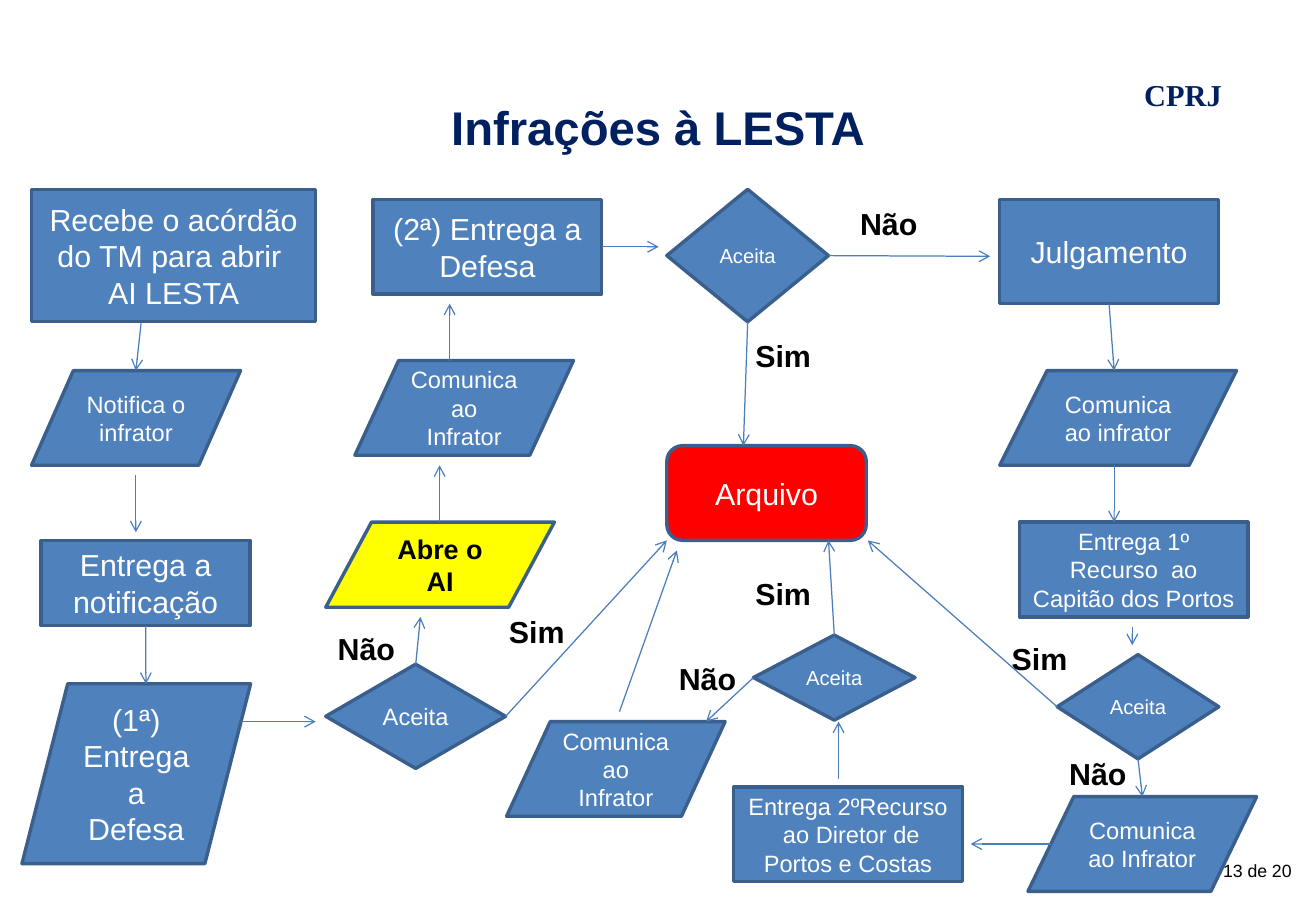
import pptx
import pptx.util
import pptx.dml.color
import pptx.enum.shapes
import pptx.enum.text
import pptx.oxml
import pptx.oxml.ns
from dataclasses import dataclass

Cm = pptx.util.Cm
Pt = pptx.util.Pt
MSO_SHAPE = pptx.enum.shapes.MSO_SHAPE
PROCESS = MSO_SHAPE.FLOWCHART_PROCESS
NOTICE = MSO_SHAPE.FLOWCHART_DATA
DECISION = MSO_SHAPE.FLOWCHART_DECISION
ARCHIVE = MSO_SHAPE.FLOWCHART_ALTERNATE_PROCESS
TOP, LEFT, BOTTOM, RIGHT = range(4)


@dataclass(frozen=True)
class Theme:
    font: str = "Arial"
    header_font: str = "Times New Roman"
    navy: str = "002060"
    blue: str = "4F81BD"
    outline: str = "3A5F8C"
    arrow: str = "4B7EBC"
    red: str = "FF0000"
    yellow: str = "FFFF00"
    white: str = "FFFFFF"
    black: str = "000000"
    title: float = 28
    large: float = 18
    medium: float = 16
    small: float = 14
    tiny: float = 12
    page: float = 10.5
    outline_width: float = 2
    arrow_width: float = 0.75


theme = Theme()

steps = {
    "acórdão": (PROCESS, "Recebe o acórdão do TM para abrir  AI LESTA", theme.large, (0.66, 3.96, 5.94, 2.77)),
    "notifica": (NOTICE, "Notifica o infrator", theme.small, (0.66, 7.75, 4.37, 1.98)),
    "notificação": (PROCESS, "Entrega a notificação", theme.large, (0.86, 11.3, 4.37, 1.78)),
    "1ª defesa": (NOTICE, "(1ª) Entrega a Defesa", theme.large, (0.46, 14.3, 4.78, 3.76)),
    "aceita 1ª": (DECISION, "Aceita", theme.small, (6.81, 13.89, 3.76, 2.18)),
    "abre": (NOTICE, "Abre o AI", theme.medium, (6.81, 10.92, 4.78, 1.78)),
    "comunica AI": (NOTICE, "Comunica ao Infrator", theme.small, (7.42, 7.54, 4.57, 1.98)),
    "2ª defesa": (PROCESS, "(2ª) Entrega a Defesa", theme.large, (7.8, 4.17, 4.78, 1.98)),
    "aceita 2ª": (DECISION, "Aceita", theme.tiny, (13.94, 3.96, 3.38, 2.77)),
    "arquivo": (ARCHIVE, "Arquivo", theme.large, (13.94, 9.32, 4.17, 1.98)),
    "julgamento": (PROCESS, "Julgamento", theme.large, (20.9, 4.17, 4.57, 2.18)),
    "comunica julgamento": (NOTICE, "Comunica ao infrator", theme.small, (20.9, 7.75, 4.95, 1.98)),
    "1º recurso": (PROCESS, "Entrega 1º Recurso  ao Capitão dos Portos", theme.small, (21.31, 10.92, 4.78, 1.98)),
    "aceita 1º": (DECISION, "Aceita", theme.tiny, (22.1, 13.69, 3.38, 2.18)),
    "comunica 1º": (NOTICE, "Comunica ao Infrator", theme.small, (21.49, 16.66, 4.78, 1.98)),
    "2º recurso": (PROCESS, "Entrega 2ºRecurso  ao Diretor de Portos e Costas", theme.small,
                   (15.34, 16.46, 4.78, 1.98)),
    "aceita 2º": (DECISION, "Aceita", theme.tiny, (15.75, 13.28, 3.38, 1.78)),
    "comunica 2º": (NOTICE, "Comunica ao Infrator", theme.small, (10.59, 15.09, 4.57, 1.98)),
}
highlights = {
    "abre": (theme.yellow, theme.black, True),
    "arquivo": (theme.red, theme.white, False),
}

arrows = [
    ((2.95, 6.76), (2.84, 7.75)),
    ((2.84, 9.93), (2.84, 11.13)),
    (("notificação", BOTTOM), (3.05, 14.3)),
    ((5.03, 15.09), (6.6, 15.09)),
    (("aceita 1ª", TOP), (8.79, 12.9)),
    (("aceita 1ª", RIGHT), (13.94, 11.3)),
    ((9.19, 10.92), (9.19, 9.73)),
    ((9.4, 7.54), (9.4, 6.35)),
    (("2ª defesa", RIGHT), (13.77, 5.16)),
    (("aceita 2ª", BOTTOM), (15.54, 9.32)),
    (("aceita 2ª", RIGHT), (20.7, 5.36)),
    (("julgamento", BOTTOM), (23.29, 7.75)),
    ((23.29, 9.73), (23.29, 10.92)),
    ((23.67, 13.11), (23.67, 13.49)),
    (("aceita 1º", LEFT), (18.14, 11.3)),
    (("aceita 1º", BOTTOM), (23.88, 16.66)),
    ((21.97, 17.65), (20.29, 17.65)),
    ((17.53, 16.28), (17.53, 15.09)),
    (("aceita 2º", LEFT), (14.76, 15.09)),
    (("aceita 2º", TOP), (17.32, 11.3)),
    ((12.95, 14.88), (14.15, 11.51)),
]

answers = [
    ("Não", 6.81, 13.06, 1.78),
    ("Sim", 10.39, 12.7, 1.98),
    ("Sim", 15.54, 6.93, 1.78),
    ("Não", 17.73, 4.17, 2.18),
    ("Sim", 20.9, 13.26, 1.78),
    ("Não", 22.1, 15.67, 2.18),
    ("Sim", 15.54, 11.91, 1.98),
    ("Não", 13.94, 13.69, 2.18),
]

presentation = pptx.Presentation()
presentation.slide_width, presentation.slide_height = Cm(27.51), Cm(19.05)
slide = presentation.slides.add_slide(presentation.slide_layouts[6])


def rgb(value):
    return pptx.dml.color.RGBColor.from_string(value)


def write(frame, text, size, color, bold=False, font=theme.font):
    frame.text = text
    for run in frame.paragraphs[0].runs:
        run.font.name, run.font.size, run.font.bold = font, Pt(size), bold
        run.font.color.rgb = rgb(color)


def add_label(text, box, size, color, bold=False, font=theme.font):
    frame = slide.shapes.add_textbox(*map(Cm, box)).text_frame
    write(frame, text, size, color, bold, font)
    frame.word_wrap = True
    frame.auto_size = pptx.enum.text.MSO_AUTO_SIZE.SHAPE_TO_FIT_TEXT
    return frame


def add_step(key, kind, text, size, box):
    fill, color, bold = highlights.get(key, (theme.blue, theme.white, False))
    step = slide.shapes.add_shape(kind, *map(Cm, box))
    step.shadow.inherit = False
    step.fill.solid()
    step.fill.fore_color.rgb = rgb(fill)
    step.line.color.rgb = rgb(theme.outline)
    step.line.width = Pt(theme.outline_width)
    write(step.text_frame, text, size, color, bold)
    step.text_frame.word_wrap = True
    step.text_frame.vertical_anchor = pptx.enum.text.MSO_ANCHOR.MIDDLE
    step.text_frame.paragraphs[0].alignment = pptx.enum.text.PP_ALIGN.CENTER
    return step


def add_arrow(start, end):
    joined = isinstance(start[0], str)
    origin = (0, 0) if joined else start
    arrow = slide.shapes.add_connector(
        pptx.enum.shapes.MSO_CONNECTOR.STRAIGHT, *map(Cm, (*origin, *end)))
    if joined:
        arrow.begin_connect(drawn[start[0]], start[1])
    arrow.line.color.rgb = rgb(theme.arrow)
    arrow.line.width = Pt(theme.arrow_width)
    properties = arrow._element.spPr
    outline = properties.find(pptx.oxml.ns.qn("a:ln"))
    namespace = pptx.oxml.ns.nsdecls("a")
    outline.append(pptx.oxml.parse_xml(f'<a:tailEnd {namespace} type="arrow"/>'))
    properties.append(pptx.oxml.parse_xml(f"<a:effectLst {namespace}/>"))


add_label("CPRJ", (23.67, 1.47, 2.39, 1.02), theme.large, theme.navy, True, theme.header_font)

title = add_label("Infrações à LESTA", (1.37, 0.76, 24.77, 3.18), theme.title, theme.navy, True)
title.auto_size = pptx.enum.text.MSO_AUTO_SIZE.NONE
title.margin_left = title.margin_right = title.margin_top = title.margin_bottom = 0
title.vertical_anchor = pptx.enum.text.MSO_ANCHOR.MIDDLE
title.paragraphs[0].alignment = pptx.enum.text.PP_ALIGN.CENTER
title.paragraphs[0].line_spacing = 1.5

drawn = {key: add_step(key, *step) for key, step in steps.items()}
for start, end in arrows:
    add_arrow(start, end)
for answer, left, top, width in answers:
    add_label(answer, (left, top, width, 1.02), theme.large, theme.black, True)
add_label("13 de 20", (25.32, 17.86, 2.18, 0.71), theme.page, theme.black)

presentation.save("out.pptx")
